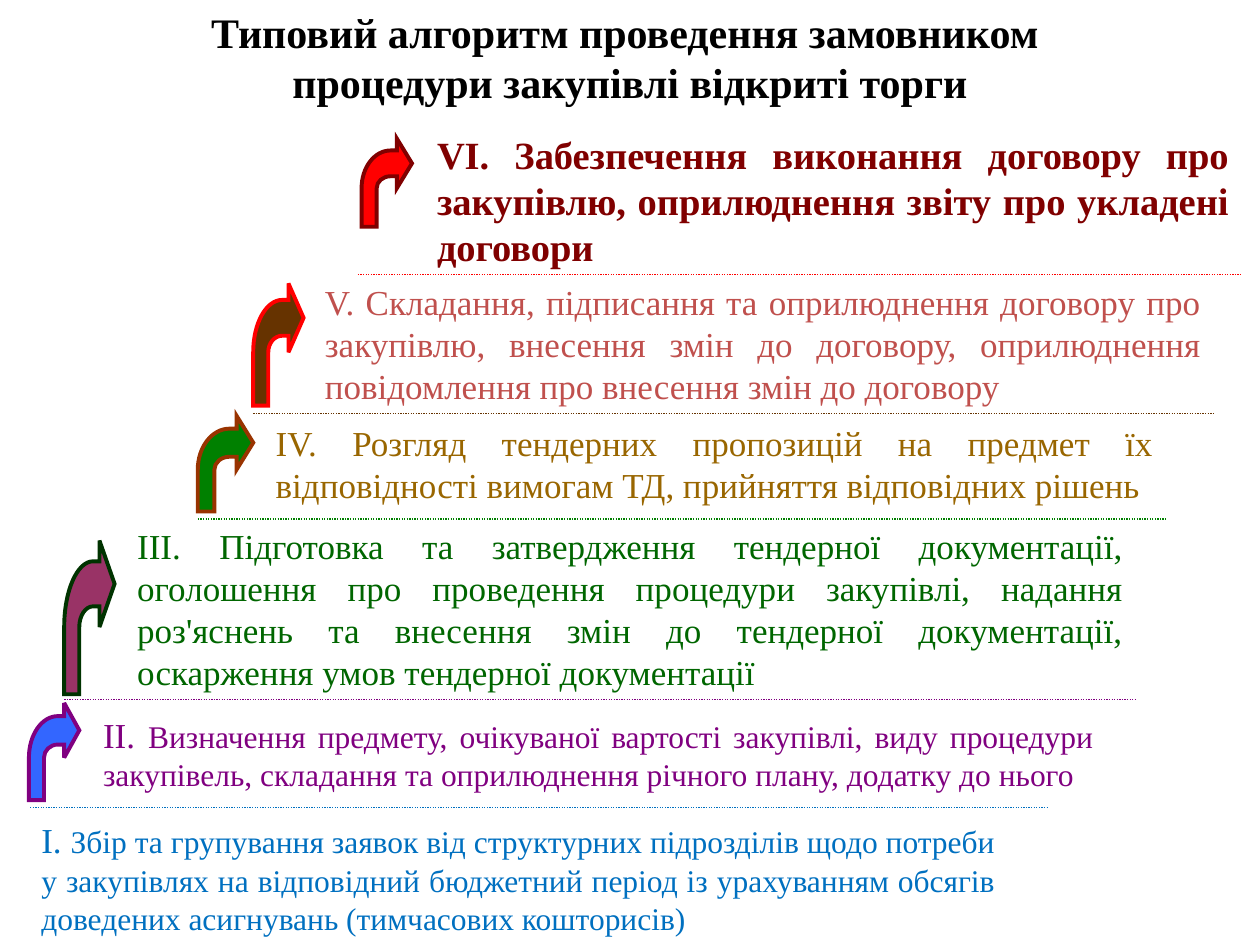
from lxml.etree import SubElement
from pptx import Presentation
from pptx.dml.color import RGBColor
from pptx.enum.dml import MSO_LINE
from pptx.enum.shapes import MSO_CONNECTOR
from pptx.enum.text import MSO_ANCHOR, MSO_AUTO_SIZE, PP_ALIGN
from pptx.oxml.ns import qn
from pptx.util import Pt

PX = 9144  # one px is a hundredth of an inch
FONT = "Times New Roman"


def color(hex_string):
    return RGBColor.from_string(hex_string)


def add_run(paragraph, text, size, hex_string, bold=False):
    run = paragraph.add_run()
    run.text = text
    run.font.name = FONT
    run.font.size = Pt(size)
    run.font.bold = bold
    run.font.color.rgb = color(hex_string)


presentation = Presentation()
presentation.slide_width = 1000 * PX
presentation.slide_height = 750 * PX
slide = presentation.slides.add_slide(presentation.slide_layouts[5])

# Title
title = slide.shapes.title
title.left, title.top, title.width, title.height = 0, 0, 1000 * PX, 90 * PX
title_frame = title.text_frame
title_frame.word_wrap = True
title_frame.auto_size = MSO_AUTO_SIZE.NONE
title_frame.vertical_anchor = MSO_ANCHOR.TOP
title_lines = ["Типовий алгоритм проведення замовником ",
               "процедури закупівлі відкриті торги"]
for index, line in enumerate(title_lines):
    paragraph = title_frame.add_paragraph() if index else title_frame.paragraphs[0]
    paragraph.alignment = PP_ALIGN.CENTER
    add_run(paragraph, line, 24, "000000", True)

# Steps, from the bottom of the staircase up: box, colour, bold, runs (text, size)
steps = [
    ((23, 645, 777, 103), "0070C0", False, [
        ("І. ", 20),
        ("Збір та групування заявок від структурних підрозділів щодо потреби "
         "у закупівлях на відповідний бюджетний період із урахуванням обсягів "
         "доведених асигнувань (тимчасових кошторисів)", 18)]),
    ((72, 561, 806, 73), "800080", False, [
        ("ІІ. ", 20),
        ("Визначення предмету, очікуваної вартості закупівлі, виду процедури "
         "закупівель, складання та оприлюднення річного плану, додатку до нього", 18)]),
    ((99, 411, 802, 143), "006600", False, [
        ("ІІІ. Підготовка та затвердження тендерної документації, оголошення про "
         "проведення процедури закупівлі, надання роз'яснень та внесення змін до "
         "тендерної документації, оскарження умов тендерної документації", 20)]),
    ((209, 330, 716, 77), "996600", False, [
        ("ІV. Розгляд тендерних пропозицій на предмет їх відповідності вимогам ТД, "
         "прийняття відповідних рішень", 20)]),
    ((248, 218, 715, 110), "C0504D", False, [
        ("V. Складання, підписання та оприлюднення договору про закупівлю, внесення "
         "змін до договору, оприлюднення повідомлення про внесення змін до договору", 20)]),
    ((337, 99, 648, 120), "800000", True, [
        ("VІ. Забезпечення виконання договору про закупівлю, оприлюднення звіту про "
         "укладені договори", 22)]),
]
for box, text_color, bold, runs in steps:
    text_box = slide.shapes.add_textbox(*(value * PX for value in box))
    frame = text_box.text_frame
    frame.word_wrap = True
    frame.auto_size = MSO_AUTO_SIZE.SHAPE_TO_FIT_TEXT
    paragraph = frame.paragraphs[0]
    paragraph.alignment = PP_ALIGN.JUSTIFY
    for text, size in runs:
        add_run(paragraph, text, size, text_color, bold)

# Dotted dividers: left, right, height on the slide, colour
dividers = [
    (24, 831, 641, "0070C0"),
    (51, 902, 555, "800080"),
    (157, 925, 412, "008000"),
    (201, 963, 328, "663300"),
    (284, 985, 218, "FF0000"),
]
for left, right, y, line_color in dividers:
    divider = slide.shapes.add_connector(
        MSO_CONNECTOR.STRAIGHT, left * PX, y * PX, right * PX, y * PX)
    divider.line.color.rgb = color(line_color)
    divider.line.width = Pt(0.75)
    divider.line.dash_style = MSO_LINE.ROUND_DOT
    SubElement(divider.line._get_or_add_ln(), qn("a:round"))
    SubElement(divider._element.spPr, qn("a:effectLst"))

# Bent arrow corners in percent of its box, from the tip counter-clockwise
corners = [(100, 28.15), (70, 0), (70, 13.5), (57.5, 13.5), (0, 56.3), (0, 100),
           (30, 100), (30, 56.3), (57.5, 42.8), (70, 42.8), (70, 56.3)]
# Control points of the curves, keyed by the corner where each curve ends
curves = {4: [(25.75, 13.5), (0, 32.66)],
          8: [(30, 48.84), (42.31, 42.8)]}

# Arrows between steps: box, fill, line
arrows = [
    ((23, 558, 40, 77), "3366FF", "800080"),
    ((51, 429, 40, 122), "993366", "003300"),
    ((287, 110, 40, 70), "FF0000", "800000"),
    ((201, 225, 40, 97), "663300", "FF0000"),
    ((157, 330, 44, 76), "008000", "993300"),
]
for (left, top, width, height), fill_color, line_color in arrows:
    points = [((left + width * x / 100) * PX, (top + height * y / 100) * PX)
              for x, y in corners]
    builder = slide.shapes.build_freeform(*points[0])
    builder.add_line_segments(points[1:], close=True)
    arrow = builder.convert_to_shape()

    # Turn the two bend segments into Bezier curves
    segments = list(next(arrow._element.iter(qn("a:path"))))
    for corner, controls in curves.items():
        segment = segments[corner]
        segment.tag = qn("a:cubicBezTo")
        for position, (x, y) in enumerate(controls):
            point = SubElement(segment, qn("a:pt"))
            point.set("x", str(round(width * x / 100 * PX)))
            point.set("y", str(round(height * y / 100 * PX)))
            segment.insert(position, point)

    arrow.shadow.inherit = False
    arrow.fill.solid()
    arrow.fill.fore_color.rgb = color(fill_color)
    arrow.line.color.rgb = color(line_color)
    arrow.line.width = Pt(2.25)
    SubElement(arrow.line._get_or_add_ln(), qn("a:miter")).set("lim", "800000")

presentation.save("out.pptx")
